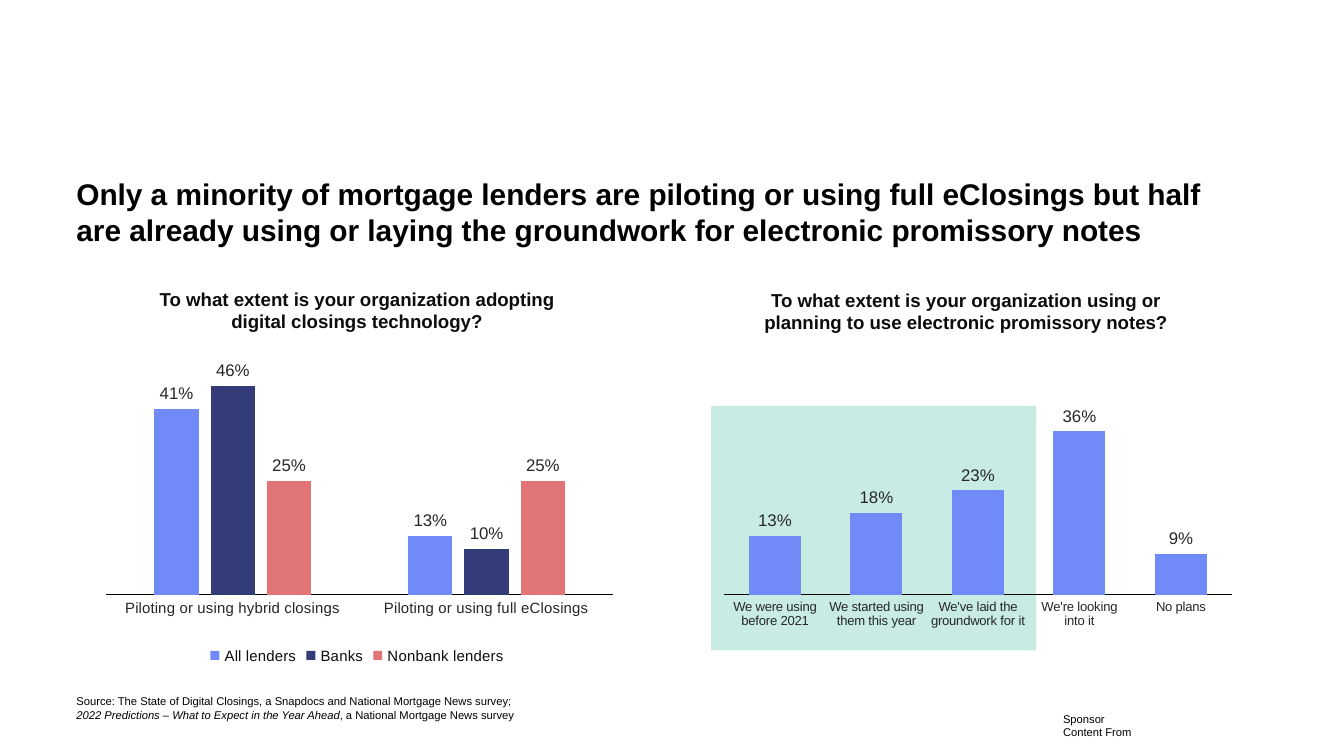
from lxml import etree
from pptx import Presentation
from pptx.chart.data import CategoryChartData
from pptx.dml.color import RGBColor
from pptx.enum.chart import XL_CHART_TYPE as CT, XL_LABEL_POSITION as LP
from pptx.enum.chart import XL_LEGEND_POSITION as LEG, XL_TICK_MARK as TM
from pptx.enum.chart import XL_TICK_LABEL_POSITION as TLP
from pptx.enum.shapes import MSO_SHAPE as SHAPE
from pptx.enum.text import MSO_AUTO_SIZE as AUTO, PP_ALIGN as ALIGN
from pptx.oxml import parse_xml
from pptx.oxml.ns import qn
from pptx.util import Inches, Pt

COLORS = {
    "black": "000000", "heading": "0D0D0D", "label": "262626",
    "blue": "708AF7", "navy": "333B78", "coral": "E17474", "mint": "64C9B2",
}
CHART_NS = "http://schemas.openxmlformats.org/drawingml/2006/chart"
PLOT = {"x": 0.01, "y": 0.03, "w": 0.99, "h": 0.73}


class SlideBuilder:
    font_name = "Arial"

    def __init__(self, slide):
        self.slide = slide

    def color(self, name):
        return RGBColor.from_string(COLORS[name])

    def style(self, font, size, color, bold=False):
        font.name = self.font_name
        font.size = Pt(size)
        font.bold = bold
        font.color.rgb = self.color(color)

    def text(self, box, lines, size, color="black", bold=False,
             align=ALIGN.LEFT, inset=None, wrap=True, grow=False):
        """Each line is a list of (text, italic) runs in one paragraph."""
        tf = self.slide.shapes.add_textbox(*map(Inches, box)).text_frame
        tf.word_wrap = wrap
        if grow:
            tf.auto_size = AUTO.SHAPE_TO_FIT_TEXT
        if inset is not None:
            tf.margin_left = tf.margin_right = Inches(inset)
            tf.margin_top = tf.margin_bottom = Inches(inset)
        p = tf.paragraphs[0]
        p.alignment = align
        self.style(p.font, size, color, bold)
        for i, runs in enumerate(lines):
            if i:
                p.add_line_break()
            for content, italic in runs:
                r = p.add_run()
                r.text = content
                if italic:
                    r.font.italic = True

    def panel(self, box, color, opacity):
        sp = self.slide.shapes.add_shape(SHAPE.RECTANGLE, *map(Inches, box))
        sp.shadow.inherit = False
        sp.fill.solid()
        sp.fill.fore_color.rgb = self.color(color)
        sp.line.fill.background()
        clr = sp.fill._xPr.find(".//" + qn("a:srgbClr"))
        etree.SubElement(clr, qn("a:alpha")).set("val", str(opacity * 1000))

    def column_chart(self, box, categories, series, gap, axis_size, legend=False):
        """Each series is (name, values, color)."""
        data = CategoryChartData(number_format="0%")
        data.categories = categories
        for name, values, _ in series:
            data.add_series(name, values)
        chart = self.slide.shapes.add_chart(
            CT.COLUMN_CLUSTERED, *map(Inches, box), data).chart
        self.style(chart.font, 10, "black")
        chart.has_title = False
        chart.has_legend = legend
        if legend:
            chart.legend.position = LEG.BOTTOM
            chart.legend.include_in_layout = False
            self.style(chart.legend.font, 8, "heading")

        cat = chart.category_axis
        cat.major_tick_mark = cat.minor_tick_mark = TM.NONE
        cat.tick_label_position = TLP.NEXT_TO_AXIS
        self.style(cat.tick_labels.font, axis_size, "label")
        cat.format.line.color.rgb = self.color("black")
        cat.format.line.width = Pt(0.75)
        val = chart.value_axis
        val.minimum_scale, val.maximum_scale = 0, 0.5
        val.has_major_gridlines = False
        val.visible = False

        plot = chart.plots[0]
        plot.gap_width, plot.overlap = gap, -27
        plot.vary_by_categories = False
        for ser, (_, _, color) in zip(plot.series, series):
            ser.format.fill.solid()
            ser.format.fill.fore_color.rgb = self.color(color)
            labels = ser.data_labels
            labels.show_value = True
            labels.position = LP.OUTSIDE_END
            labels.number_format = "0%"
            labels.number_format_is_linked = False
            self.style(labels.font, 9, "label")
        self.place_plot(chart)

    def place_plot(self, chart):
        """Fix the inner plot area inside the chart frame."""
        area = chart._chartSpace.chart.plotArea
        for old in area.findall(qn("c:layout")):
            area.remove(old)
        sizes = "".join(f'<c:{k} val="{v}"/>' for k, v in PLOT.items())
        area.insert(0, parse_xml(
            f'<c:layout xmlns:c="{CHART_NS}"><c:manualLayout>'
            '<c:layoutTarget val="inner"/><c:xMode val="edge"/>'
            f'<c:yMode val="edge"/>{sizes}</c:manualLayout></c:layout>'))


def main():
    prs = Presentation()
    prs.slide_width = Inches(10)
    prs.slide_height = prs.slide_width * 9 // 16
    s = SlideBuilder(prs.slides.add_slide(prs.slide_layouts[6]))

    s.text((7.91, 5.3, 1.17, 0.2),
           [[("Sponsor ", False)], [("Content From", False)]],
           6, inset=0, grow=True)
    s.panel((5.29, 3.02, 2.42, 1.82), "mint", 35)
    s.column_chart(
        (5.35, 2.67, 3.82, 2.31),
        ["We were using before 2021", "We started using them this year",
         "We've laid the groundwork for it", "We're looking into it", "No plans"],
        [("Series 1", (0.13, 0.18, 0.23, 0.36, 0.09), "blue")],
        gap=95, axis_size=7)
    s.column_chart(
        (0.75, 2.67, 3.82, 2.31),
        ["Piloting or using hybrid closings", "Piloting or using full eClosings"],
        [("All lenders", (0.41, 0.13), "blue"),
         ("Banks", (0.46, 0.10), "navy"),
         ("Nonbank lenders", (0.25, 0.25), "coral")],
        gap=219, axis_size=8, legend=True)

    questions = [
        (5.49, 2.1, "To what extent is your organization using or planning "
                    "to use electronic promissory notes?"),
        (0.96, 2.09, "To what extent is your organization adopting "
                     "digital closings technology?"),
    ]
    for left, top, question in questions:
        s.text((left, top, 3.39, 0.44), [[(question, False)]], 10,
               "heading", bold=True, align=ALIGN.CENTER, grow=True)
    s.text((0.47, 1.26, 8.62, 0.82),
           [[("Only a minority of mortgage lenders are piloting or using full "
              "eClosings but half are already using or laying the groundwork "
              "for electronic promissory notes", False)]], 16, bold=True)
    s.text((0.47, 5.12, 3.51, 0.3),
           [[("Source: The State of Digital Closings, a Snapdocs and "
              "National Mortgage News survey;", False)],
            [("2022 Predictions – What to Expect in the Year Ahead", True),
             (", a National Mortgage News survey", False)]],
           6, wrap=False, grow=True)
    prs.save("out.pptx")


if __name__ == "__main__":
    main()
